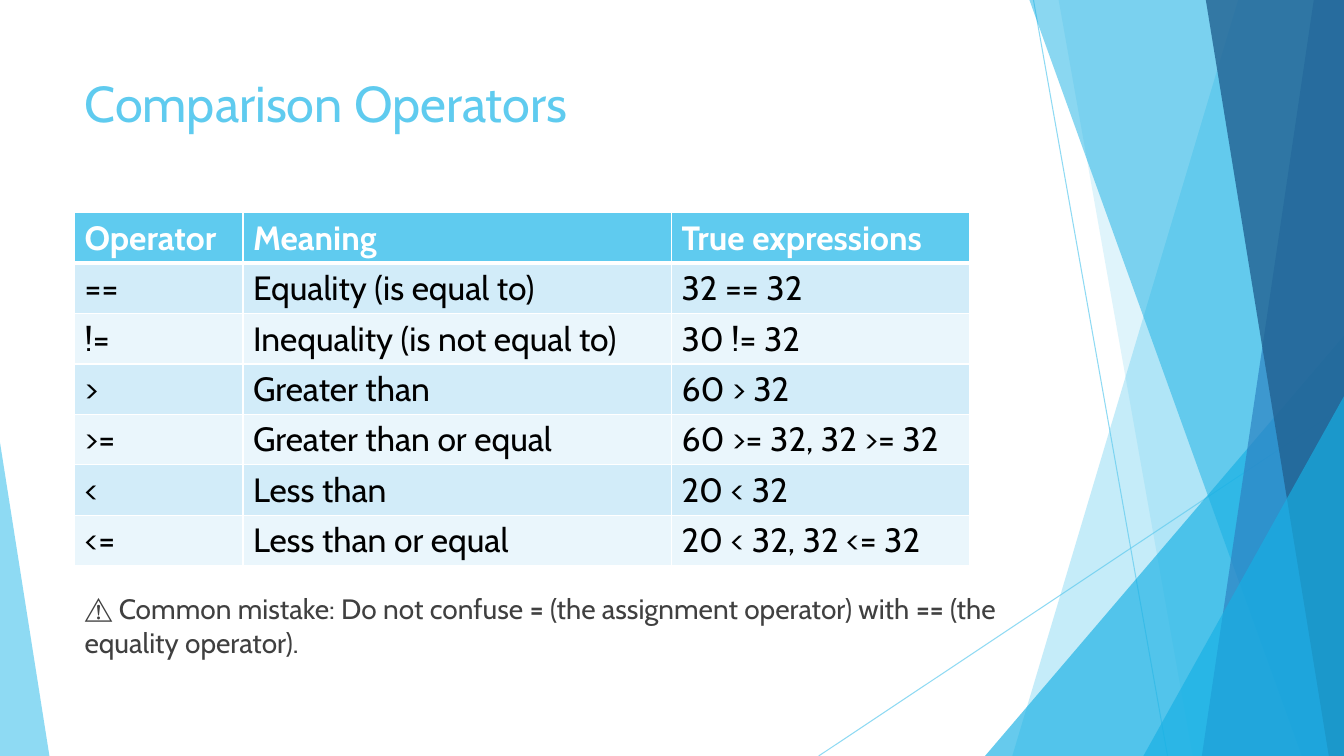
from typing import NamedTuple

from lxml import etree
from pptx import Presentation
from pptx import util as u
from pptx.dml.color import RGBColor
from pptx.enum import shapes, text
from pptx.oxml.ns import qn

FONT = "Cabin"
WIDTH, HEIGHT = 13.33, 7.5
COLORS = {
    "sky": "5FCBEF",
    "cyan": "17B0E4",
    "blue": "2E83C3",
    "navy": "226292",
    "body": "404040",
    "black": "000000",
    "white": "FFFFFF",
    "band_dark": "D2ECF9",
    "band_light": "EAF6FC",
}


class Ray(NamedTuple):
    start: tuple[float, float]
    end: tuple[float, float]


class Facet(NamedTuple):
    """A panel reaching the right edge, with a slanted left side."""
    top_x: float
    bottom_x: float
    color: str
    opacity: int


class Corner(NamedTuple):
    """A right triangle standing on the bottom edge."""
    left: float
    top: float
    width: float
    apex: float
    color: str
    opacity: int


RAYS = [Ray((10.25, 0), (11.58, HEIGHT)), Ray((WIDTH, 4.03), (8.12, HEIGHT))]
DECORATIONS = [
    Facet(12.28, 10.04, "sky", 36),
    Facet(10.5, 11.83, "sky", 20),
    Corner(9.77, 3.33, 3.56, 1, "cyan", 66),
    Facet(10.21, 12.91, "cyan", 50),
    Facet(13.03, 11.92, "blue", 70),
    Facet(11.96, 13.18, "navy", 80),
    Corner(11.34, 3.93, 1.99, 1, "cyan", 66),
    Corner(0, 4.39, 0.49, 0, "sky", 70),
]
COLUMN_WIDTHS = [1.67, 4.25, 2.96]
ROW_HEIGHT = 0.41
ROWS = [
    ("Operator", "Meaning", "True expressions"),
    ("==", "Equality (is equal to)", "32 == 32"),
    ("!=", "Inequality (is not equal to)", "30 != 32"),
    (">", "Greater than", "60 > 32"),
    (">=", "Greater than or equal", "60 >= 32, 32 >= 32"),
    ("<", "Less than", "20 < 32"),
    ("<=", "Less than or equal", "20 < 32, 32 <= 32"),
]
WARNING = [
    ("⚠️ Common mistake: Do not confuse ", False),
    ("=", True),
    (" (the assignment operator) with ", False),
    ("==", True),
    (" (the equality operator).", False),
]


def rgb(name: str) -> RGBColor:
    return RGBColor.from_string(COLORS[name])


def set_opacity(properties, percent: int) -> None:
    color = next(properties.iter(qn("a:srgbClr")))
    etree.SubElement(color, qn("a:alpha")).set("val", str(percent * 1000))


def add_text(paragraph, content: str, *, size: float, color: str, bold: bool = False) -> None:
    run = paragraph.add_run()
    run.text = content
    run.font.name = FONT
    run.font.size = u.Pt(size)
    run.font.bold = bold
    run.font.color.rgb = rgb(color)


def add_ray(slide, ray: Ray) -> None:
    points = [u.Inches(value) for value in (*ray.start, *ray.end)]
    line = slide.shapes.add_connector(shapes.MSO_CONNECTOR.STRAIGHT, *points)
    line.line.color.rgb = rgb("sky")
    line.line.width = u.Pt(0.75)
    properties = line._element.spPr
    set_opacity(properties, 70)
    etree.SubElement(properties, qn("a:effectLst"))


def add_decoration(slide, item: Facet | Corner) -> None:
    if isinstance(item, Facet):
        builder = slide.shapes.build_freeform(u.Inches(item.top_x), 0)
        outline = [(WIDTH, 0), (WIDTH, HEIGHT), (item.bottom_x, HEIGHT)]
        builder.add_line_segments([(u.Inches(x), u.Inches(y)) for x, y in outline])
        shape = builder.convert_to_shape()
    else:
        shape = slide.shapes.add_shape(
            shapes.MSO_SHAPE.ISOSCELES_TRIANGLE, u.Inches(item.left), u.Inches(item.top),
            u.Inches(item.width), u.Inches(HEIGHT - item.top))
        shape.adjustments[0] = item.apex
    shape.shadow.inherit = False
    shape.fill.solid()
    shape.fill.fore_color.rgb = rgb(item.color)
    set_opacity(shape._element.spPr, item.opacity)
    shape.line.fill.background()


def set_borders(cell, bottom_width: float, top_width: float) -> None:
    properties = cell._tc.get_or_add_tcPr()
    widths = {"lnL": 1, "lnR": 1, "lnT": top_width, "lnB": bottom_width}
    for position, (side, width) in enumerate(widths.items()):
        border = etree.Element(qn(f"a:{side}"), w=str(u.Pt(width)))
        fill = etree.SubElement(border, qn("a:solidFill"))
        etree.SubElement(fill, qn("a:srgbClr"), val=COLORS["white"])
        properties.insert(position, border)


def add_operator_table(slide) -> None:
    table = slide.shapes.add_table(
        len(ROWS), len(COLUMN_WIDTHS), u.Inches(0.74), u.Inches(2.11),
        u.Inches(sum(COLUMN_WIDTHS)), u.Inches(ROW_HEIGHT * len(ROWS))).table
    for column, width in zip(table.columns, COLUMN_WIDTHS):
        column.width = u.Inches(width)
    for row_index, values in enumerate(ROWS):
        header = row_index == 0
        band = "sky" if header else "band_dark" if row_index % 2 else "band_light"
        for column_index, value in enumerate(values):
            cell = table.cell(row_index, column_index)
            cell.fill.solid()
            cell.fill.fore_color.rgb = rgb(band)
            set_borders(cell, bottom_width=3 if header else 1,
                        top_width=3 if row_index == 1 else 1)
            add_text(cell.text_frame.paragraphs[0], value, size=24,
                     color="white" if header else "black", bold=header)


def format_title(title) -> None:
    title.left, title.top = u.Inches(0.74), u.Inches(0.67)
    title.width, title.height = u.Inches(9.4), u.Inches(1.44)
    frame = title.text_frame
    frame.vertical_anchor = text.MSO_ANCHOR.TOP
    frame.auto_size = text.MSO_AUTO_SIZE.NONE
    paragraph = frame.paragraphs[0]
    paragraph.alignment = text.PP_ALIGN.LEFT
    add_text(paragraph, "Comparison Operators", size=36, color="sky")


def add_warning(slide) -> None:
    box = slide.shapes.add_textbox(
        u.Inches(0.74), u.Inches(5.82), u.Inches(9.4), u.Inches(0.8))
    box.text_frame.word_wrap = True
    paragraph = box.text_frame.paragraphs[0]
    paragraph.space_before = u.Pt(10)
    for content, bold in WARNING:
        add_text(paragraph, content, size=20, color="body", bold=bold)


def main() -> None:
    presentation = Presentation()
    presentation.slide_width = u.Inches(WIDTH)
    presentation.slide_height = u.Inches(HEIGHT)
    slide = presentation.slides.add_slide(presentation.slide_layouts.get_by_name("Title Only"))
    for ray in RAYS:
        add_ray(slide, ray)
    for item in DECORATIONS:
        add_decoration(slide, item)
    format_title(slide.shapes.title)
    add_warning(slide)
    add_operator_table(slide)
    presentation.save("out.pptx")


if __name__ == "__main__":
    main()
